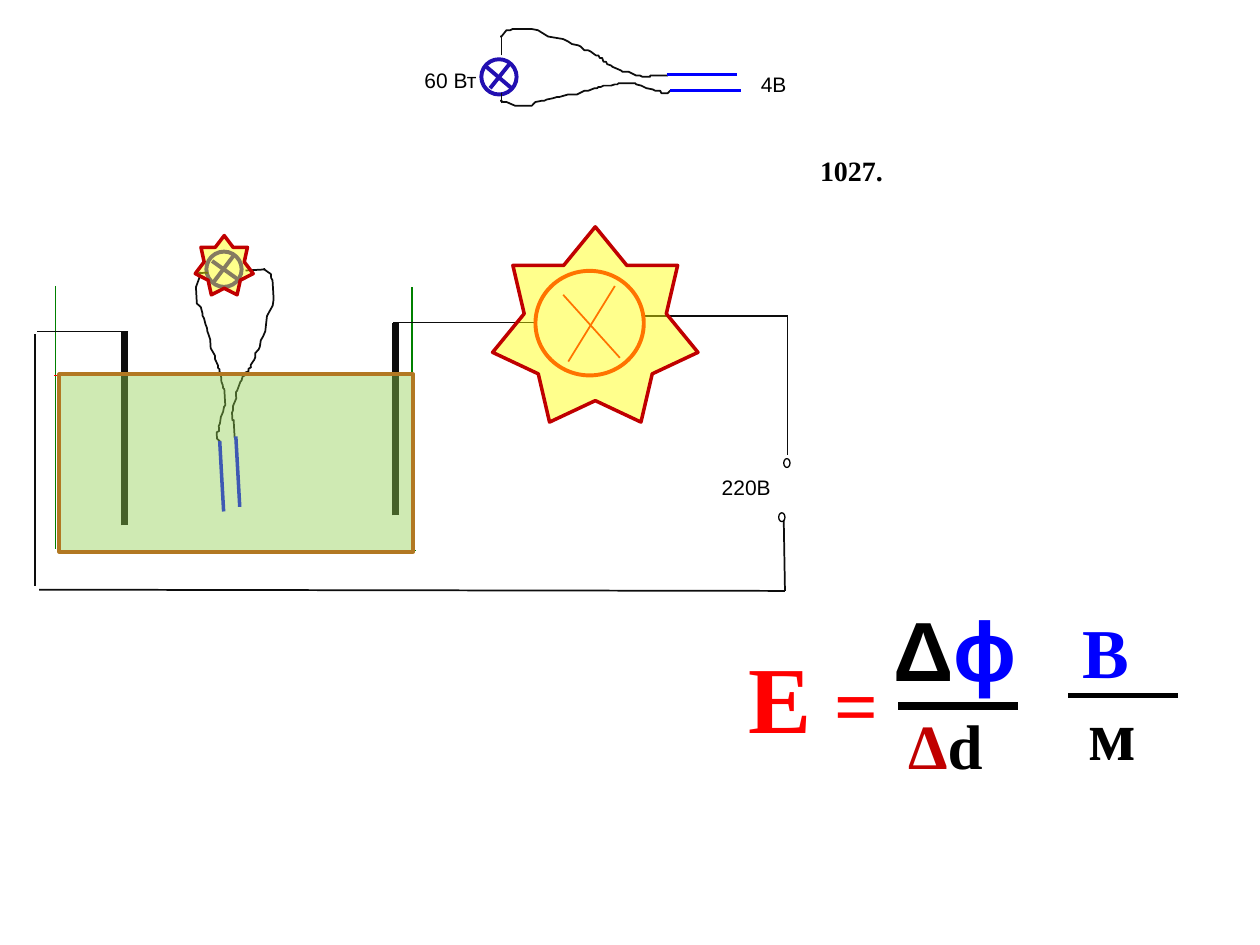
"""Builds a physics slide: lamp probe, electrolyte tank circuit and field strength formula."""
from dataclasses import dataclass
from math import cos, radians, sin
from typing import NamedTuple, Optional

from lxml import etree
from pptx import Presentation
from pptx.dml.color import RGBColor
from pptx.enum import shapes as kinds, text as modes
from pptx.oxml.ns import qn
from pptx.util import Inches, Pt

BLACK = RGBColor(0x00, 0x00, 0x00)
INK = RGBColor(0x0D, 0x0D, 0x0D)
WHITE = RGBColor(0xFF, 0xFF, 0xFF)
RED = RGBColor(0xFF, 0x00, 0x00)
DARK_RED = RGBColor(0xC0, 0x00, 0x00)
BLUE = RGBColor(0x00, 0x00, 0xFF)
INDIGO = RGBColor(0x22, 0x0F, 0xB1)
GLASS = RGBColor(0x00, 0x80, 0x00)
WATER = RGBColor(0x92, 0xD0, 0x50)
BROWN = RGBColor(0xB2, 0x78, 0x22)
YELLOW = RGBColor(0xFF, 0xFF, 0x00)
SANS, SERIF = "Arial", "Times New Roman"

OVAL = kinds.MSO_SHAPE.OVAL
STAR = kinds.MSO_SHAPE.STAR_7_POINT


class Point(NamedTuple):
    x: float
    y: float


class Box(NamedTuple):
    left: float
    top: float
    width: float
    height: float


@dataclass
class Wire:
    start: tuple
    end: tuple
    color: RGBColor = INK
    weight: float = 1


@dataclass
class Span:
    text: str
    size: float
    color: RGBColor = BLACK
    font: str = SERIF
    bold: bool = True


@dataclass
class Caption:
    box: Box
    spans: list
    middle: bool = False
    space_after: float = 0
    wrap: bool = True


@dataclass
class Placement:
    """Turns probe points about a pivot and moves the pivot to a centre."""
    center: Point
    degrees: float = 0

    def apply(self, point: tuple) -> Point:
        dx, dy = point[0] - PIVOT.x, point[1] - PIVOT.y
        c, s = cos(radians(self.degrees)), sin(radians(self.degrees))
        return Point(self.center.x + dx * c - dy * s, self.center.y + dx * s + dy * c)


TANK = [
    Wire((0.44, 2.27), (0.44, 4.36), GLASS), Wire((3.27, 2.28), (3.27, 4.38), GLASS),
    Wire((3.3, 4.37), (0.45, 4.37), GLASS), Wire((3.28, 2.98), (0.43, 2.98), RED),
]
CIRCUIT = [
    Wire((0.99, 4.17), (0.99, 2.63), INK, 4), Wire((3.14, 4.09), (3.14, 2.56), INK, 4),
    Wire((3.12, 2.56), (4.32, 2.56)), Wire((5.04, 2.51), (6.25, 2.51)),
    Wire((1.02, 2.63), (0.29, 2.63)), Wire((0.28, 2.65), (0.28, 4.65)),
    Wire((0.31, 4.68), (6.23, 4.69)), Wire((6.25, 2.51), (6.25, 3.61)),
    Wire((6.22, 4.1), (6.23, 4.69)),
]
LAMP_CROSS = [Wire((4.51, 2.87), (4.88, 2.27), RED), Wire((4.47, 2.34), (4.92, 2.84), RED)]

PIVOT = Point(4.635, 0.42)
PROBE_LAMP = Point(3.96, 0.61)
PROBE_DIAMETER = 0.28
PROBE_WIRES = [
    Wire((3.98, 0.44), (3.98, 0.29)), Wire((3.98, 0.82), (3.98, 0.74)),
    Wire((3.89, 0.7), (4.05, 0.5), INDIGO, 2.25), Wire((3.86, 0.53), (4.06, 0.7), INDIGO, 2.25),
    Wire((5.32, 0.72), (5.88, 0.72), BLUE, 2), Wire((5.29, 0.59), (5.85, 0.59), BLUE, 2),
]
UPPER_LEAD = [
    (3.97, 0.29), (3.98, 0.29), (4.02, 0.24), (4.05, 0.24), (4.07, 0.23), (4.22, 0.23),
    (4.27, 0.24), (4.35, 0.29), (4.47, 0.31), (4.51, 0.33), (4.54, 0.35), (4.59, 0.36),
    (4.61, 0.37), (4.64, 0.4), (4.67, 0.4), (4.69, 0.41), (4.73, 0.44), (4.75, 0.44),
    (4.76, 0.46), (4.78, 0.46), (4.79, 0.49), (4.81, 0.49), (4.82, 0.51), (4.85, 0.52),
    (4.86, 0.53), (4.93, 0.56), (4.94, 0.57), (4.99, 0.57), (5.05, 0.6), (5.08, 0.6),
    (5.1, 0.61), (5.16, 0.61), (5.16, 0.6), (5.3, 0.6),
]
LOWER_LEAD = [
    (3.97, 0.8), (3.98, 0.8), (3.99, 0.81), (4.02, 0.81), (4.09, 0.84), (4.22, 0.84),
    (4.25, 0.81), (4.3, 0.8), (4.32, 0.8), (4.34, 0.79), (4.39, 0.78), (4.42, 0.77),
    (4.44, 0.77), (4.51, 0.75), (4.58, 0.75), (4.64, 0.72), (4.67, 0.72), (4.72, 0.7),
    (4.74, 0.7), (4.75, 0.69), (4.77, 0.69), (4.79, 0.68), (4.85, 0.68), (4.88, 0.67),
    (4.9, 0.67), (4.91, 0.66), (5.04, 0.66), (5.05, 0.67), (5.09, 0.68), (5.13, 0.7),
    (5.18, 0.71), (5.2, 0.72), (5.24, 0.72), (5.25, 0.74), (5.3, 0.74), (5.32, 0.72),
    (5.34, 0.72),
]

LABELS = [
    Caption(Box(6.41, 1.17, 0.78, 0.37), [Span("1027.", 16)], middle=True),
    Caption(Box(3.27, 0.49, 0.78, 0.3), [Span("60 Вт", 12, font=SANS, bold=False)], middle=True),
    Caption(Box(5.63, 3.72, 0.63, 0.3), [Span("220В", 12, font=SANS, bold=False)], middle=True),
    Caption(Box(5.94, 0.52, 0.54, 0.3), [Span("4В", 12, font=SANS, bold=False)], middle=True),
]
FORMULA = [
    Caption(Box(6.99, 4.69, 1.25, 1.02),
            [Span("Δ", 48, font=SANS), Span("ϕ", 48, BLUE, SANS)], space_after=10),
    Caption(Box(7.11, 5.56, 0.92, 0.71), [Span("Δ", 36, DARK_RED), Span("d", 36)], wrap=False),
    Caption(Box(5.84, 5.02, 1.25, 1.09),
            [Span("E ", 54, RED), Span("=", 44, RED)], space_after=10),
    Caption(Box(8.49, 4.78, 1.36, 0.78), [Span("В", 40, BLUE)], space_after=10),
    Caption(Box(8.54, 5.43, 1.21, 0.78), [Span("м", 40)], space_after=10),
]
FRACTION_BARS = [
    Wire((7.13, 5.6), (8.08, 5.6), BLACK, 4.5), Wire((8.48, 5.52), (9.35, 5.52), BLACK, 3),
]


def draw_wire(canvas, wire: Wire) -> None:
    ends = [Inches(v) for v in (*wire.start, *wire.end)]
    connector = canvas.add_connector(kinds.MSO_CONNECTOR.STRAIGHT, *ends)
    connector.line.color.rgb = wire.color
    connector.line.width = Pt(wire.weight)
    etree.SubElement(connector.element.spPr, qn("a:effectLst"))


def style(shape, fill: Optional[RGBColor], color: RGBColor, weight: float, opacity: int) -> None:
    shape.shadow.inherit = False
    shape.line.color.rgb = color
    shape.line.width = Pt(weight)
    if fill is None:
        shape.fill.background()
        return
    shape.fill.solid()
    shape.fill.fore_color.rgb = fill
    if opacity < 100:
        tint = shape.element.spPr.find(qn("a:solidFill"))[0]
        etree.SubElement(tint, qn("a:alpha")).set("val", str(opacity * 1000))


def draw_shape(canvas, kind, box: Box, fill: Optional[RGBColor], color: RGBColor,
               weight: float, opacity: int = 100) -> None:
    style(canvas.add_shape(kind, *map(Inches, box)), fill, color, weight, opacity)


def draw_probe(canvas, place: Placement) -> None:
    lamp = place.apply(PROBE_LAMP)
    corner = (lamp.x - PROBE_DIAMETER / 2, lamp.y - PROBE_DIAMETER / 2)
    draw_shape(canvas, OVAL, Box(*corner, PROBE_DIAMETER, PROBE_DIAMETER), None, INDIGO, 2.25)
    for lead in (UPPER_LEAD, LOWER_LEAD):
        first, *rest = [tuple(map(Inches, place.apply(point))) for point in lead]
        builder = canvas.build_freeform(*first)
        builder.add_line_segments(rest, close=False)
        style(builder.convert_to_shape(), None, INK, 1, 100)
    for wire in PROBE_WIRES:
        draw_wire(canvas, Wire(place.apply(wire.start), place.apply(wire.end),
                               wire.color, wire.weight))


def draw_caption(canvas, caption: Caption) -> None:
    frame = canvas.add_textbox(*map(Inches, caption.box)).text_frame
    frame.word_wrap = caption.wrap
    if caption.middle:
        frame.vertical_anchor = modes.MSO_ANCHOR.MIDDLE
    paragraph = frame.paragraphs[0]
    paragraph.space_after = Pt(caption.space_after)
    for span in caption.spans:
        run = paragraph.add_run()
        run.text = span.text
        run.font.name, run.font.size, run.font.bold = span.font, Pt(span.size), span.bold
        run.font.color.rgb = span.color


def main() -> None:
    deck = Presentation()
    deck.slide_width, deck.slide_height = Inches(10), Inches(7.5)
    canvas = deck.slides.add_slide(deck.slide_layouts[6]).shapes

    tank = canvas.add_group_shape().shapes
    for wire in TANK:
        draw_wire(tank, wire)
    circuit = canvas.add_group_shape().shapes
    for wire in CIRCUIT:
        draw_wire(circuit, wire)
    draw_shape(circuit, OVAL, Box(4.25, 2.15, 0.86, 0.83), WHITE, RED, 2.25)
    for wire in LAMP_CROSS:
        draw_wire(circuit, wire)
    for label in LABELS:
        draw_caption(canvas, label)
    for terminal in (Box(6.22, 3.64, 0.05, 0.07), Box(6.18, 4.07, 0.05, 0.07)):
        draw_shape(canvas, OVAL, terminal, WHITE, BLACK, 0.75)
    for place in (Placement(PIVOT), Placement(Point(2.005, 2.8), 86.8)):
        draw_probe(canvas.add_group_shape().shapes, place)

    draw_shape(canvas, kinds.MSO_SHAPE.RECTANGLE, Box(0.47, 2.97, 2.81, 1.41), WATER, BROWN, 2, 43)
    for glow in (Box(3.91, 1.8, 1.63, 1.55), Box(1.55, 1.87, 0.46, 0.47)):
        draw_shape(canvas, STAR, glow, YELLOW, DARK_RED, 2, 45)
    for part in FORMULA:
        draw_caption(canvas, part)
    for bar in FRACTION_BARS:
        draw_wire(canvas, bar)
    deck.save("out.pptx")


if __name__ == "__main__":
    main()
